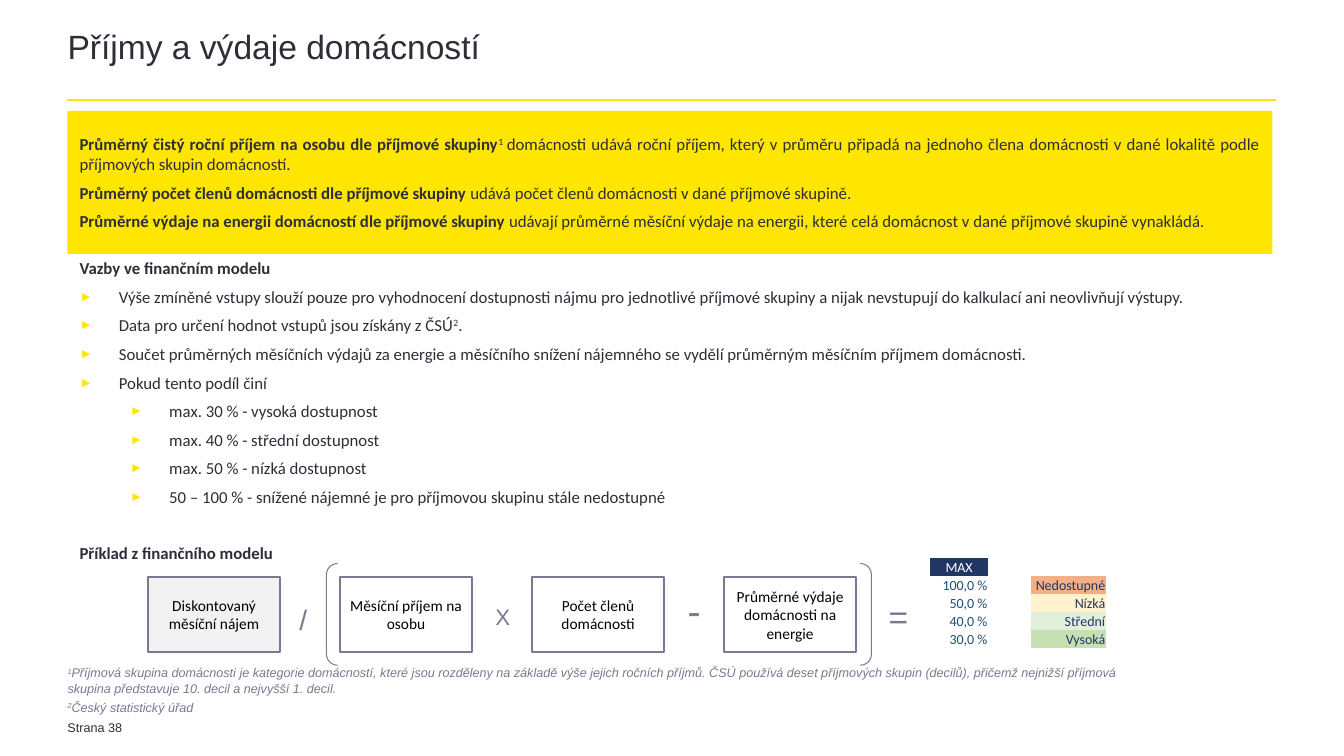
from lxml.etree import SubElement
from pptx import Presentation
from pptx.dml.color import RGBColor
from pptx.enum.shapes import MSO_CONNECTOR, MSO_SHAPE
from pptx.enum.text import MSO_ANCHOR, PP_ALIGN
from pptx.oxml.ns import qn
from pptx.util import Inches, Pt

YELLOW, DARK, GREY = "FFE600", "2E2E38", "797991"
NAVY, BLUE = "203764", "1F4E78"
NO_STYLE = "{2D5ABB26-0587-4C30-8999-92F81FD0307C}"
BOLD, RAISED = {"bold": True}, {"raised": True}
JUSTIFY, CENTER, RIGHT = PP_ALIGN.JUSTIFY, PP_ALIGN.CENTER, PP_ALIGN.RIGHT


def color(value):
    return RGBColor.from_string(value)


def paint(fill, value):
    if value:
        fill.solid()
        fill.fore_color.rgb = color(value)
    else:
        fill.background()


def write(para, text, font="Calibri", size=12, ink=DARK, bold=False, italic=False, raised=False):
    span = para.add_run()
    span.text = text
    span.font.name, span.font.size = font, Pt(size)
    span.font.bold, span.font.italic = bold, italic
    span.font.color.rgb = color(ink)
    if raised:
        span.font._element.set("baseline", "30000")


def add_bullet(para, indent):
    props = para._p.get_or_add_pPr()
    props.set("marL", str(Inches(indent)))
    props.set("indent", str(Inches(-0.39)))
    SubElement(SubElement(props, qn("a:buClr")), qn("a:srgbClr")).set("val", YELLOW)
    SubElement(props, qn("a:buSzPct")).set("val", "80000")
    SubElement(props, qn("a:buFont")).set("typeface", "Arial")
    SubElement(props, qn("a:buChar")).set("char", "►")


class SlideBuilder:
    def __init__(self, page):
        self.page = page

    def fill_text(self, box, paras, margins, align=None, after=0, spacing=None,
                  anchor=MSO_ANCHOR.TOP, **style):
        """Each paragraph is (bullet indent or None, [(text, format), ...])."""
        frame = box.text_frame
        frame.word_wrap = True
        frame.vertical_anchor = anchor
        (frame.margin_left, frame.margin_top,
         frame.margin_right, frame.margin_bottom) = map(Inches, margins)
        for number, (indent, spans) in enumerate(paras):
            para = frame.add_paragraph() if number else frame.paragraphs[0]
            para.space_after = Pt(after)
            if spacing:
                para.line_spacing = spacing
            if indent:
                add_bullet(para, indent)
            else:
                para.alignment = align
            for text, extra in spans:
                write(para, text, **{**style, **extra})

    def text(self, place, paras, margins=(0, 0.04, 0, 0), **style):
        box = self.page.shapes.add_textbox(*map(Inches, place))
        self.fill_text(box, paras, margins, **style)

    def shape(self, kind, place, fill=None, line=None, width=1.5):
        box = self.page.shapes.add_shape(kind, *map(Inches, place))
        box.shadow.inherit = False
        paint(box.fill, fill)
        paint(box.line.fill, line)
        if line:
            box.line.width = Pt(width)
        return box

    def rule(self, left, right, top):
        line = self.page.shapes.add_connector(
            MSO_CONNECTOR.STRAIGHT, Inches(left), Inches(top), Inches(right), Inches(top))
        line.line.color.rgb = color(YELLOW)
        line.line.width = Pt(1.5)
        SubElement(line.element.spPr, qn("a:effectLst"))

    def table(self, place, widths, rows):
        frame = self.page.shapes.add_table(len(rows), len(widths), *map(Inches, place))
        next(frame.element.iter(qn("a:tableStyleId"))).text = NO_STYLE
        table = frame.table
        table.first_row = table.horz_banding = False
        for column, width in zip(table.columns, widths):
            column.width = Inches(width)
        for row, cells in zip(table.rows, rows):
            for cell, (text, ink, fill, align) in zip(row.cells, cells):
                cell.margin_left = cell.margin_top = cell.margin_right = Inches(0.01)
                cell.margin_bottom = 0
                paint(cell.fill, fill)
                para = cell.text_frame.paragraphs[0]
                para.alignment = align
                if text:
                    write(para, text, size=10, ink=ink)
                else:
                    SubElement(para._p, qn("a:endParaRPr")).set("sz", "1000")


def main():
    deck = Presentation()
    deck.slide_width, deck.slide_height = Inches(13.34), Inches(7.5)
    slide = SlideBuilder(deck.slides.add_slide(deck.slide_layouts[6]))
    padding = (0.12,) * 4

    # Title, rule and page number
    slide.text((0.67, 0.32, 12.01, 0.65), [(None, [("Příjmy a výdaje domácností", {})])],
               margins=(0, 0, 0, 0), font="Arial", size=24, spacing=0.85)
    slide.rule(0.67, 12.67, 0.99)
    slide.text((0.67, 7.12, 1, 0.17), [(None, [("Strana 38", {})])],
               font="Arial", size=9, spacing=0.85)

    # Definitions
    panel = slide.shape(MSO_SHAPE.RECTANGLE, (0.67, 1.1, 11.96, 1.42), fill=YELLOW)
    slide.fill_text(panel, [
        (None, [("Průměrný čistý roční příjem na osobu dle příjmové skupiny", BOLD), ("1 ", RAISED),
                ("domácnosti udává roční příjem, který v průměru připadá na jednoho člena domácnosti "
                 "v dané lokalitě podle příjmových skupin domácností.", {})]),
        (None, [("Průměrný počet členů domácnosti dle příjmové skupiny ", BOLD),
                ("udává počet členů domácnosti v dané příjmové skupině.", {})]),
        (None, [("Průměrné výdaje na energii domácností dle příjmové skupiny ", BOLD),
                ("udávají průměrné měsíční výdaje na energii, které celá domácnost "
                 "v dané příjmové skupině vynakládá.", {})]),
    ], padding, align=JUSTIFY, after=6, anchor=MSO_ANCHOR.MIDDLE)

    # Links in the financial model
    limits = ["max. 30 % - vysoká dostupnost", "max. 40 % - střední dostupnost",
              "max. 50 % - nízká dostupnost",
              "50 – 100 % - snížené nájemné je pro příjmovou skupinu stále nedostupné"]
    slide.text((0.67, 2.44, 11.96, 2.93), [
        (None, [("Vazby ve finančním modelu", BOLD)]),
        (0.39, [("Výše zmíněné vstupy slouží pouze pro vyhodnocení dostupnosti nájmu pro jednotlivé "
                 "příjmové skupiny a nijak nevstupují do kalkulací ani neovlivňují výstupy.", {})]),
        (0.39, [("Data pro určení hodnot vstupů jsou získány z ČSÚ", {}), ("2", RAISED), (".", {})]),
        (0.39, [("Součet průměrných měsíčních výdajů za energie a měsíčního snížení nájemného "
                 "se vydělí průměrným měsíčním příjmem domácnosti.", {})]),
        (0.39, [("Pokud tento podíl činí", {})]),
        *[(0.89, [(limit, {})]) for limit in limits],
    ], padding, align=JUSTIFY, after=6)

    # Footnotes
    slide.text((0.67, 6.56, 10.65, 0.54), [
        (None, [("1", RAISED),
                ("Příjmová skupina domácnosti je kategorie domácností, které jsou rozděleny na základě "
                 "výše jejich ročních příjmů. ČSÚ používá deset příjmových skupin (decilů), přičemž "
                 "nejnižší příjmová skupina představuje 10. decil a nejvyšší 1. decil.", {})]),
        (None, [("2", RAISED), ("Český statistický úřad", {})]),
    ], after=3, font="Arial", size=9, ink=GREY, italic=True)

    # Affordability table
    slide.text((0.67, 5.28, 11.96, 0.44), [(None, [("Příklad z finančního modelu", BOLD)])],
               padding, align=JUSTIFY)
    empty = ("", NAVY, None, RIGHT)
    levels = [("100,0 %", "Nedostupné", "F4B084"), ("50,0 %", "Nízká", "FFF2CC"),
              ("40,0 %", "Střední", "E2EFDA"), ("30,0 %", "Vysoká", "C6E0B4")]
    slide.table((9.23, 5.54, 1.75, 0.89), (0.58, 0.42, 0.75),
                [[("MAX", "FFFFFF", NAVY, CENTER), empty, empty]]
                + [[(limit, BLUE, None, RIGHT), empty, (name, NAVY, fill, RIGHT)]
                   for limit, name, fill in levels])

    # Formula: four terms at an equal pitch
    terms = ["Diskontovaný měsíční nájem", "Měsíční příjem na osobu",
             "Počet členů domácnosti", "Průměrné výdaje domácnosti na energie"]
    for number, term in enumerate(terms):
        box = slide.shape(MSO_SHAPE.RECTANGLE, (1.47 + 1.906 * number, 5.72, 1.31, 0.75),
                          fill=None if number else "F2F2F2", line=GREY)
        slide.fill_text(box, [(None, [(term, {})])], (0.04,) * 4, align=CENTER,
                        anchor=MSO_ANCHOR.MIDDLE, size=11, ink="000000")
    for sign, left, top, height, size in [("/", 2.92, 5.94, 0.38, 20), ("X", 4.9, 5.94, 0.31, 16),
                                          ("-", 6.8, 5.78, 0.51, 28), ("=", 8.82, 5.87, 0.44, 24)]:
        slide.text((left, top, 0.18, height), [(None, [(sign, {})])],
                   align=CENTER, font="Arial", size=size, ink=GREY)
    bracket = slide.shape(MSO_SHAPE.DOUBLE_BRACKET, (3.24, 5.59, 5.41, 1.01), line=GREY, width=0.75)
    bracket.adjustments[0] = 0.11

    deck.save("out.pptx")


if __name__ == "__main__":
    main()
